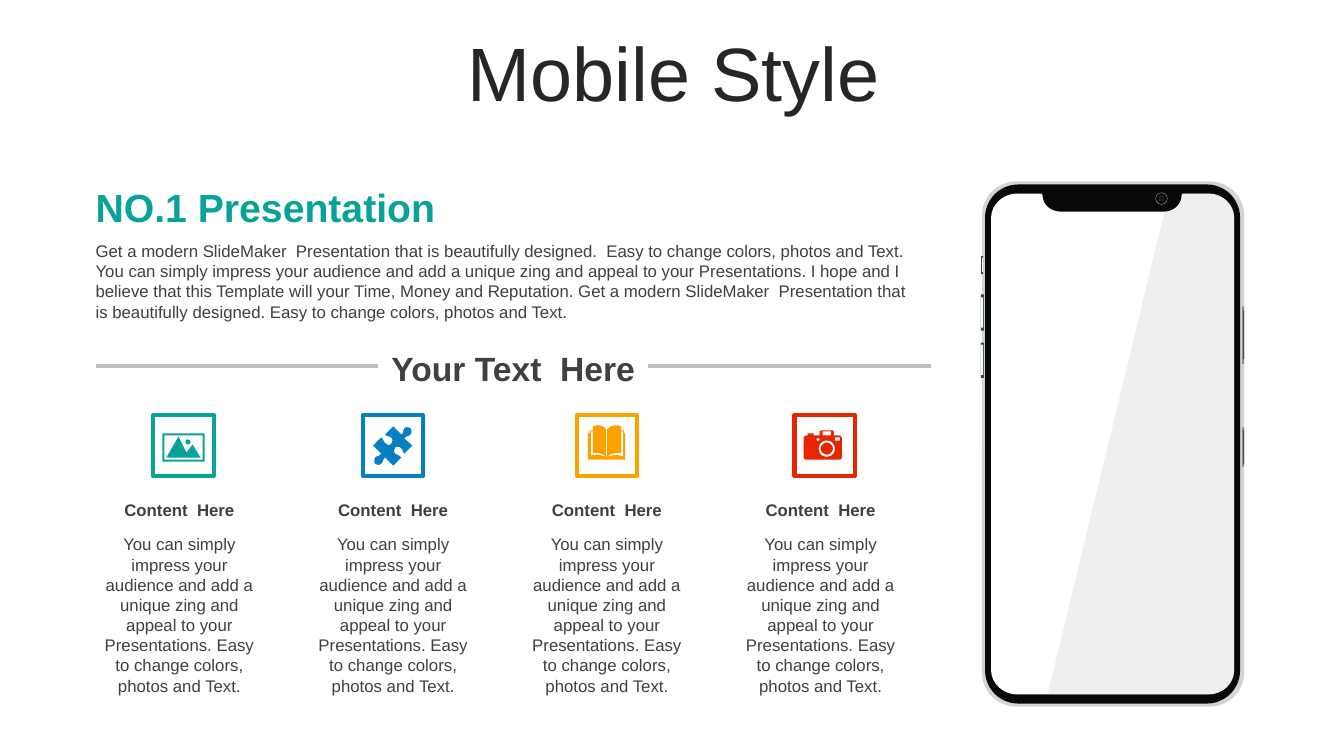
from pptx import Presentation, util as u
from pptx.dml import color
from pptx.enum import shapes, text
from pptx.oxml import ns, xmlchemy as xml
from lxml import etree

THEME = {
    "font": "Arial",
    "ink": "262626", "body": "404040", "rule": "BFBFBF", "white": "FFFFFF",
    "teal": "07A398", "blue": "0680C3", "gold": "FBA200", "red": "E62601",
    "metal": "D0D4D8", "black": "070808", "steel": "364551", "ice": "FAFDFF",
    "key": "8A9096", "slot": "4A4C4D", "ring": "A6A6A6", "lens": "081422",
    "gloss": "D9D9D9",
    "title": 54, "head": 28, "sub": 24, "small": 12, "line": 3,
}

COLS, ROWS = 1333, 750
CELL = u.Inches(0.01)

TITLE = "Mobile Style"
HEAD = "NO.1 Presentation"
INTRO = (
    "Get a modern SlideMaker  Presentation that is beautifully designed.  "
    "Easy to change colors, photos and Text. You can simply impress your "
    "audience and add a unique zing and appeal to your Presentations. I hope "
    "and I believe that this Template will your Time, Money and Reputation. "
    "Get a modern SlideMaker  Presentation that is beautifully designed. "
    "Easy to change colors, photos and Text."
)
SUB = "Your Text  Here"
LABEL = "Content  Here"
NOTE = (
    "You can simply impress your audience and add a unique zing and appeal "
    "to your Presentations. Easy to change colors, photos and Text."
)

PHOTO = (
    "M 186 436 C 187 436 189 437 189 438 C 189 440 187 441 186 441 "
    "C 185 441 184 440 184 438 C 184 437 185 436 186 436 "
    "M 177 433 L 185 449 L 191 441 L 199 454 L 165 454 "
    "M 163 432 L 163 456 L 201 456 L 201 432 "
    "M 161 430 L 203 430 L 203 458 L 161 458"
)
PUZZLE = (
    "M 407 425 C 408 426 409 429 407 431 C 406 433 403 432 401 435 L 409 442 "
    "L 401 450 C 399 448 400 446 397 444 C 396 443 393 443 392 444 "
    "C 391 446 390 448 392 450 C 395 452 395 451 398 454 L 390 462 L 382 454 "
    "C 379 456 381 457 378 460 C 376 462 374 461 372 460 "
    "C 371 458 371 456 372 454 C 374 452 376 453 378 450 L 370 442 L 378 434 "
    "C 381 436 380 439 383 440 C 384 442 387 442 388 440 "
    "C 389 439 390 436 388 434 C 385 432 385 434 382 431 L 390 423 L 398 431 "
    "C 401 429 399 428 401 425 C 403 423 406 424 407 425"
)
BOOK = (
    "M 601 453 C 601 453 602 454 602 453 C 608 452 611 450 618 453 L 618 428 "
    "L 616 428 L 616 450 C 612 448 607 450 602 453 L 602 426 "
    "C 605 423 608 422 611 422 C 612 422 614 422 616 423 L 616 427 L 619 427 "
    "L 619 430 L 620 430 L 620 456 L 583 456 L 583 430 L 585 430 L 585 427 "
    "L 588 427 L 588 423 C 590 422 591 422 593 422 C 596 422 599 423 601 426 "
    "L 601 453 C 597 450 592 448 588 450 L 588 428 L 586 428 L 586 452 "
    "C 592 450 596 452 601 453"
)
CAMERA = (
    "M 820 439 C 823 439 826 442 826 445 C 826 448 823 451 820 451 "
    "C 817 451 814 448 814 445 C 814 442 817 439 820 439 "
    "M 820 437 C 815 437 812 441 812 445 C 812 450 815 453 820 453 "
    "C 825 453 828 450 828 445 C 828 441 825 437 820 437 "
    "M 810 435 L 810 437 L 813 437 L 813 435 "
    "M 828 434 L 828 437 L 833 437 L 833 434 "
    "M 816 428 L 816 432 L 824 432 L 824 428 "
    "M 814 427 L 826 427 L 827 428 L 827 432 L 832 432 "
    "C 834 432 835 434 835 435 L 835 453 C 835 455 834 456 832 456 L 800 456 "
    "C 798 456 797 455 797 453 L 797 435 C 797 434 798 432 800 432 L 801 432 "
    "L 801 430 L 807 430 L 807 432 L 813 432 L 813 428"
)
ITEMS = [(152, "teal", PHOTO), (360, "blue", PUZZLE),
         (572, "gold", BOOK), (788, "red", CAMERA)]

SCREEN = (
    "M 1198 192 L 1174 192 C 1173 192 1172 193 1172 194 "
    "C 1172 203 1164 210 1155 210 L 1052 210 C 1042 210 1034 203 1034 194 "
    "C 1034 193 1033 192 1032 192 L 1009 192 C 995 192 983 203 983 216 "
    "L 983 665 C 983 678 995 689 1009 689 L 1198 689 "
    "C 1213 689 1224 678 1224 665 L 1224 216 C 1224 203 1213 192 1198 192"
)
GLOSS = (
    "M 1174 192 L 1198 192 C 1213 192 1224 203 1224 216 L 1224 665 "
    "C 1224 678 1213 689 1198 689 L 1039 689 L 1155 210 L 1162 209 "
    "C 1168 207 1172 201 1172 194 C 1172 193 1173 192 1174 192"
)
CASE = [("metal", (974, 180, 260, 521)), ("black", (977, 183, 253, 515))]
KEYS = [
    ("steel", (973, 254, 2, 18)), ("ice", (974, 256, 1, 14)),
    ("steel", (973, 292, 3, 36)), ("ice", (973, 295, 2, 30)),
    ("steel", (973, 340, 3, 35)), ("ice", (973, 342, 2, 30)),
    ("key", (1232, 304, 2, 57)), ("slot", (1233, 308, 1, 48)),
    ("key", (1232, 424, 2, 39)), ("slot", (1233, 427, 1, 33)),
]
LENS = [("ring", 12), ("black", 11), ("ink", 5), ("lens", 3)]

prs = Presentation()
prs.slide_width, prs.slide_height = COLS * CELL, ROWS * CELL
slide = prs.slides.add_slide(prs.slide_layouts[5])
parts = slide.shapes


def rgb(name):
    return color.RGBColor.from_string(THEME[name])


def paint(shape, fill, edge=None):
    shape.shadow.inherit = False
    shape.fill.solid()
    shape.fill.fore_color.rgb = rgb(fill)
    if edge:
        shape.line.color.rgb = rgb(edge)
        shape.line.width = u.Pt(THEME["line"])
    else:
        shape.line.fill.background()
    return shape


def block(kind, box, fill, edge=None):
    return paint(parts.add_shape(kind, *(n * CELL for n in box)), fill, edge)


def trace(code):
    loops, mode, nums = [], "", []
    for word in code.split():
        if word in "MLC":
            mode, nums = word, []
            continue
        nums.append(int(word) * CELL)
        if len(nums) < (6 if mode == "C" else 2):
            continue
        if mode == "M":
            loops.append([tuple(nums)])
        elif mode == "L":
            loops[-1].append(tuple(nums))
        else:
            ends = [loops[-1][-1], nums[:2], nums[2:4], nums[4:]]
            for t in (k / 8 for k in range(1, 9)):
                mix = ((1 - t) ** 3, 3 * t * (1 - t) ** 2, 3 * t * t * (1 - t), t ** 3)
                loops[-1].append(tuple(sum(m * p[a] for m, p in zip(mix, ends)) for a in (0, 1)))
    return loops


def outline(code, fill):
    first, *rest = trace(code)
    pen = parts.build_freeform(*first[0], scale=1.0)
    pen.add_line_segments(first[1:], close=True)
    for loop in rest:
        pen.move_to(*loop[0])
        pen.add_line_segments(loop[1:], close=True)
    return paint(pen.convert_to_shape(), fill)


def write(box, words, size, tint="body", bold=False, center=True, shape=None):
    shape = shape or parts.add_textbox(0, 0, 0, 0)
    for key, n in zip(("left", "top", "width", "height"), box):
        setattr(shape, key, n * CELL)
    frame = shape.text_frame
    frame.word_wrap, frame.auto_size = True, text.MSO_AUTO_SIZE.NONE
    par = frame.paragraphs[0]
    par.alignment = text.PP_ALIGN.CENTER if center else text.PP_ALIGN.LEFT
    run = par.add_run()
    run.text = words
    form = {"name": THEME["font"], "size": u.Pt(THEME[size]), "bold": bold}
    for key, val in form.items():
        setattr(run.font, key, val)
    run.font.color.rgb = rgb(tint)
    return frame


def rule(left, right, y):
    line = parts.add_connector(shapes.MSO_CONNECTOR.STRAIGHT,
                               left * CELL, y * CELL, right * CELL, y * CELL)
    line.line.color.rgb = rgb("rule")
    line.line.width = u.Pt(THEME["line"])
    etree.SubElement(line.element.spPr, ns.qn("a:effectLst"))


def phone():
    kind = shapes.MSO_SHAPE
    for fill, box in CASE:
        block(kind.ROUNDED_RECTANGLE, box, fill).adjustments[0] = 0.13
    outline(SCREEN, "white")
    for fill, box in KEYS:
        block(kind.RECTANGLE, box, fill)
    for fill, d in LENS:
        block(kind.OVAL, (1152 - d / 2, 197 - d / 2, d, d), fill)
    shine = outline(GLOSS, "gloss")
    tint = shine.element.spPr.find(".//" + ns.qn("a:srgbClr"))
    etree.SubElement(tint, ns.qn("a:alpha")).set("val", "40000")


phone()
top = write((35, 37, 1266, 79), TITLE, "title", "ink", shape=parts.title)
top.vertical_anchor = text.MSO_ANCHOR.MIDDLE
for key, val in {"line_spacing": 0.9, "space_before": u.Pt(10)}.items():
    setattr(top.paragraphs[0], key, val)
write((85, 177, 856, 57), HEAD, "head", "teal", bold=True, center=False)
write((85, 234, 837, 91), INTRO, "small", center=False)
write((367, 340, 284, 50), SUB, "sub", bold=True)
for left in (95, 643):
    rule(left, left + 280, 363)
for col, (left, tint, icon) in enumerate(ITEMS):
    x = 85 + 212 * col
    block(shapes.MSO_SHAPE.RECTANGLE, (left, 412, 60, 60), "white", tint)
    outline(icon, tint)
    write((x, 491, 186, 30), LABEL, "small", bold=True)
    write((x, 525, 186, 172), NOTE, "small")

prs.save("out.pptx")
